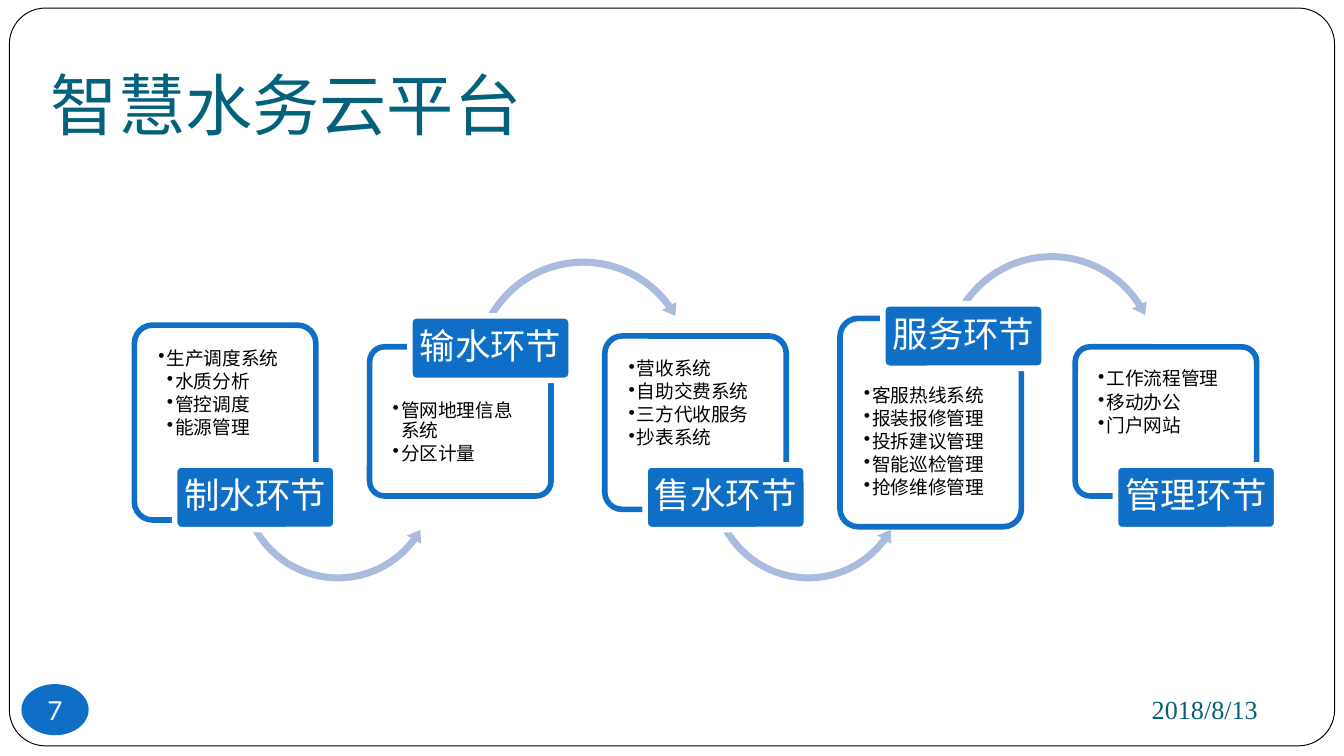
from dataclasses import dataclass
from typing import Optional

from lxml.etree import SubElement
from pptx import Presentation
from pptx.dml.color import RGBColor
from pptx.enum.shapes import MSO_SHAPE
from pptx.enum.text import MSO_ANCHOR, PP_ALIGN
from pptx.oxml.ns import qn
from pptx.util import Pt

COLORS = {"white": "FFFFFF", "black": "000000", "blue": "0F6FC6", "teal": "04617B", "arrow": "ABBBDF"}
SERIF, SANS = "Times New Roman", "Lato"
LEFT, STEP, BOX_W = 72, 126, 97.2
LABEL_W, LABEL_H, LABEL_LOW = 86.4, 34.6, 249.1


@dataclass
class Arrow:
    dx: float
    top: float
    size: float
    adj: tuple
    over: bool = False


@dataclass
class Stage:
    name: str
    items: list
    top: float
    height: float
    arrow: Optional[Arrow] = None
    label_top: float = LABEL_LOW
    label_dx: float = 21.6
    sub_level: int = 1


UNDER = Arrow(54, 203.8, 110.2, (0.034, 4.207, 21.95, 90.24, 0.04))
STAGES = [
    Stage("制水环节", ["生产调度系统", "水质分析", "管控调度", "能源管理"], 174.2, 104.4, UNDER, sub_level=2),
    Stage("输水环节", ["管网地理信息系统", "分区计量"], 185.8, 79.9,
          Arrow(53.3, 136.1, 122.4, (0.031, 3.75, 194.48, 125.74, 0.036), True), 169.2),
    Stage("售水环节", ["营收系统", "自助交费系统", "三方代收服务", "抄表系统"], 180, 92.9, UNDER),
    Stage("服务环节", ["客服热线系统", "报装报修管理", "投拆建议管理", "智能巡检管理", "抢修维修管理"], 170.6, 111.6,
          Arrow(53.3, 133.2, 120.2, (0.031, 3.815, 196.58, 127.91, 0.036), True), 162.7, 23),
    Stage("管理环节", ["工作流程管理", "移动办公", "门户网站"], 185.8, 79.9),
]


def rgb(name: str) -> RGBColor:
    """Return the named colour."""
    return RGBColor.from_string(COLORS[name])


def write(sp, lines, *, size, color, font=SERIF, align=PP_ALIGN.LEFT, anchor=MSO_ANCHOR.MIDDLE,
          insets=(7.2, 3.6, 7.2, 3.6), wrap=True, levels=None, spacing=None, after=None) -> None:
    """Fill a shape with formatted paragraphs, bulleted when levels are given."""
    tf = sp.text_frame
    tf.word_wrap, tf.vertical_anchor = wrap, anchor
    tf.margin_left, tf.margin_top, tf.margin_right, tf.margin_bottom = map(Pt, insets)
    for i, line in enumerate(lines):
        p = tf.add_paragraph() if i else tf.paragraphs[0]
        if levels:
            p.level = levels[i]
            pPr = p._p.get_or_add_pPr()
            pPr.set("marL", str(Pt(4.5 * levels[i])))
            pPr.set("indent", str(Pt(-4.5)))
            SubElement(pPr, qn("a:buChar")).set("char", "•")
        p.alignment = align
        if spacing:
            p.line_spacing = spacing
        if after:
            p.space_after = Pt(after)
        r = p.add_run()
        r.text = line
        r.font.name, r.font.size, r.font.color.rgb = font, Pt(size), rgb(color)


def add_shape(s, kind, x, y, w, h, *, fill, line=None, width=3, adj=(), alpha=None):
    """Add a filled preset shape without shadow."""
    sp = s.shapes.add_shape(kind, Pt(x), Pt(y), Pt(w), Pt(h))
    sp.shadow.inherit = False
    sp.fill.solid()
    sp.fill.fore_color.rgb = rgb(fill)
    if alpha:
        clr = sp._element.spPr.find(qn("a:solidFill")).find(qn("a:srgbClr"))
        SubElement(clr, qn("a:alpha")).set("val", str(alpha * 1000))
    if line:
        sp.line.color.rgb, sp.line.width = rgb(line), Pt(width)
    else:
        sp.line.fill.background()
    for i, value in enumerate(adj):
        sp.adjustments[i] = value
    return sp


def add_text(s, text: str, x: float, y: float, w: float, h: float, **fmt) -> None:
    """Add a one-paragraph text box."""
    write(s.shapes.add_textbox(Pt(x), Pt(y), Pt(w), Pt(h)), [text], **fmt)


def add_stage(s, stage: Stage, x: float) -> None:
    """Draw one stage: its box, its arrow to the next stage and its label."""
    label_above = stage.label_top < stage.top
    box = add_shape(s, MSO_SHAPE.ROUNDED_RECTANGLE, x, stage.top, BOX_W, stage.height,
                    fill="white", line="blue", adj=(0.1,), alpha=90)
    inset_top = 10 + (0.21 * stage.height if label_above else 0)
    levels = [1] + [stage.sub_level] * (len(stage.items) - 1)
    write(box, stage.items, size=10, color="black", anchor=MSO_ANCHOR.TOP,
          insets=(10, inset_top, 10, 10), levels=levels, spacing=0.9, after=1.5)
    a = stage.arrow
    if a:
        kind = MSO_SHAPE.CIRCULAR_ARROW if a.over else MSO_SHAPE.LEFT_CIRCULAR_ARROW
        add_shape(s, kind, x + a.dx, a.top, a.size, a.size, fill="arrow", adj=a.adj)
    label = add_shape(s, MSO_SHAPE.ROUNDED_RECTANGLE, x + stage.label_dx, stage.label_top,
                      LABEL_W, LABEL_H, fill="blue", line="white", adj=(0.1,))
    write(label, [stage.name], size=19, color="white", align=PP_ALIGN.CENTER,
          insets=(2.7, 1.8, 2.7, 1.8), spacing=0.9)


def main() -> None:
    """Build and save the slide."""
    prs = Presentation()
    prs.slide_width, prs.slide_height = Pt(720), Pt(405)
    s = prs.slides.add_slide(prs.slide_layouts[6])
    add_shape(s, MSO_SHAPE.ROUNDED_RECTANGLE, 5, 4.3, 710, 395.3,
              fill="white", line="black", width=0.5, adj=(0.049,))
    add_text(s, "智慧水务云平台", 20.2, 16.6, 663.8, 67.7, size=36, color="teal", font=SANS,
             anchor=MSO_ANCHOR.BOTTOM, insets=(7.2, 3.6, 7.2, 7.2))
    add_text(s, "2018/8/13", 486, 365.8, 195, 28, size=14, color="teal", align=PP_ALIGN.RIGHT)
    badge = add_shape(s, MSO_SHAPE.OVAL, 11.5, 366.5, 36, 27.4, fill="blue")
    write(badge, ["7"], size=14, color="white", font=SANS, align=PP_ALIGN.CENTER,
          insets=(0, 0, 0, 0), wrap=False)
    for i, stage in enumerate(STAGES):
        add_stage(s, stage, LEFT + i * STEP)
    prs.save("out.pptx")


if __name__ == "__main__":
    main()
